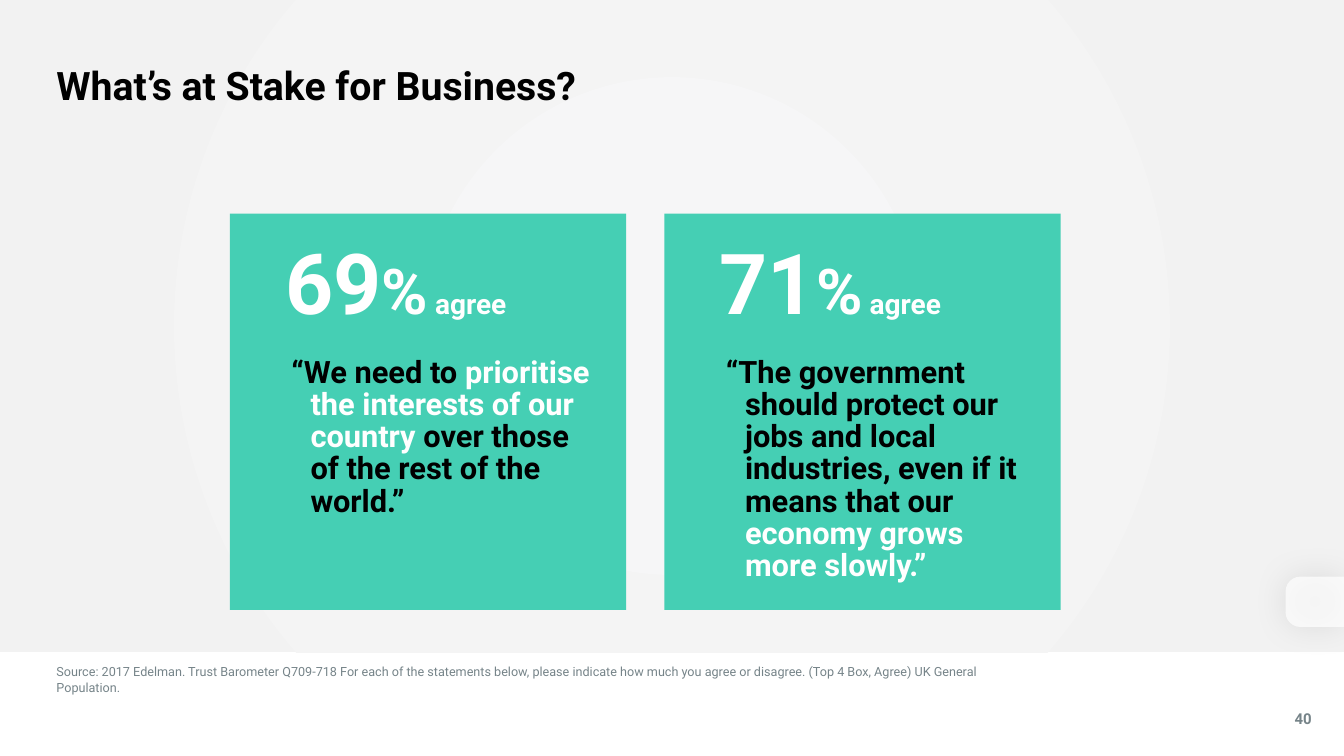
from lxml import etree
from pptx import Presentation
from pptx.dml.color import RGBColor
from pptx.enum.shapes import MSO_SHAPE as Shape
from pptx.enum.text import MSO_ANCHOR as Anchor, PP_ALIGN as Align
from pptx.oxml import parse_xml
from pptx.oxml.ns import nsdecls, qn
from pptx.util import Inches, Pt

COLORS = {
    "black": "000000",
    "white": "FFFFFF",
    "teal": "45CFB4",
    "grey": "768489",
    "glow": "F6F6F7",
    "backdrop": "F2F2F2",
}
FONT = "Roboto"


def set_font(font, size, color, bold=True):
    font.name = FONT
    font.size = Pt(size)
    font.bold = bold
    font.color.rgb = RGBColor.from_string(COLORS[color])


def add_text(left, top, width, height, text=""):
    """Add a wrapping text box without insets; return its frame."""
    frame = slide.shapes.add_textbox(
        Inches(left), Inches(top), Inches(width), Inches(height)).text_frame
    frame.word_wrap = True
    frame.margin_left = frame.margin_right = 0
    frame.margin_top = frame.margin_bottom = 0
    frame.vertical_anchor = Anchor.TOP
    frame.text = text
    return frame


prs = Presentation()
prs.slide_width, prs.slide_height = Inches(13.33), Inches(7.5)
slide = prs.slides.add_slide(prs.slide_layouts[6])

# Backdrop with a radial gradient
backdrop = slide.shapes.add_shape(
    Shape.RECTANGLE, 0, 0, prs.slide_width, Inches(6.47))
backdrop.shadow.inherit = False
backdrop.line.fill.background()
backdrop.fill.gradient()
for stop, color in zip(backdrop.fill.gradient_stops, ("glow", "backdrop")):
    stop.color.rgb = RGBColor.from_string(COLORS[color])
gradient = backdrop.fill._xPr.find(qn("a:gradFill"))
gradient.replace(gradient.find(qn("a:lin")), parse_xml(
    f'<a:path {nsdecls("a")} path="circle">'
    '<a:fillToRect l="50000" t="50000" r="50000" b="50000"/></a:path>'))

# Title, source and page number
title = add_text(0.56, 0.57, 9.21, 0.51, "What’s at Stake for Business?")
title.vertical_anchor = Anchor.BOTTOM
set_font(title.paragraphs[0].font, 28, "black")

source = add_text(
    0.56, 6.59, 9.21, 0.52,
    "Source: 2017 Edelman. Trust Barometer Q709-718 For each of the "
    "statements below, please indicate how much you agree or disagree. "
    "(Top 4 Box, Agree) UK General Population.")
set_font(source.paragraphs[0].font, 9, "grey", bold=False)

page_number = add_text(12.75, 7.04, 0.35, 0.52, "40").paragraphs[0]
page_number.alignment = Align.CENTER
set_font(page_number.font, 10.7, "grey")

# Statement cards: share that agrees, then the quote in coloured parts
statements = [
    ("69", [("“We need to ", "black"),
            ("prioritise the interests of our country ", "white"),
            ("over those of the rest of the world.”", "black")]),
    ("71", [("“The government should protect our jobs and local industries, "
             "even if it means that our ", "black"),
            ("economy grows more slowly.”", "white")]),
]
CARD_SIZE, CARD_TOP, CARD_STEP = 3.93, 2.12, 4.31
LINE_SPACING = 0.87

for index, (share, quote_parts) in enumerate(statements):
    card_left = 2.28 + index * CARD_STEP
    card = slide.shapes.add_shape(
        Shape.RECTANGLE, Inches(card_left), Inches(CARD_TOP),
        Inches(CARD_SIZE), Inches(CARD_SIZE))
    card.shadow.inherit = False
    card.fill.solid()
    card.fill.fore_color.rgb = RGBColor.from_string(COLORS["teal"])
    card.line.fill.background()

    card_text = card.text_frame
    card_text.vertical_anchor = Anchor.TOP
    card_text.margin_top = Inches(0.3)
    card_text.margin_left = card_text.margin_right = Inches(0.1)
    card_text.margin_bottom = Inches(0.1)
    agreement = card_text.paragraphs[0]
    agreement.alignment = Align.LEFT
    agreement.line_spacing = LINE_SPACING
    agreement._p.get_or_add_pPr().set("marL", str(Inches(0.45)))
    for text, size in ((share, 60), ("%", 45), (" agree", 20)):
        run = agreement.add_run()
        run.text = text
        set_font(run.font, size, "white")

    quote = add_text(card_left + 0.61, 3.55, 3, 0.67).paragraphs[0]
    quote.line_spacing = LINE_SPACING
    quote_format = quote._p.get_or_add_pPr()
    quote_format.set("marL", str(Inches(0.19)))
    quote_format.set("indent", str(-Inches(0.19)))
    for text, color in quote_parts:
        run = quote.add_run()
        run.text = text
        set_font(run.font, 22, color)

# Translucent tab at the right edge, rounded on its left side
tab = slide.shapes.add_shape(
    Shape.ROUND_2_SAME_RECTANGLE,
    Inches(12.79), Inches(5.68), Inches(0.5), Inches(0.58))
tab.rotation = 270
tab.adjustments[0] = 0.296
tab.line.fill.background()
tab.fill.solid()
tab.fill.fore_color.rgb = RGBColor.from_string(COLORS["white"])
tab_color = tab.fill._xPr.find(qn("a:solidFill")).find(qn("a:srgbClr"))
etree.SubElement(tab_color, qn("a:alpha"), val="72000")
tab.shadow.inherit = False
tab_effects = tab._element.spPr.find(qn("a:effectLst"))
tab_effects.append(parse_xml(
    f'<a:outerShdw {nsdecls("a")} blurRad="{Pt(25)}" dist="0" '
    f'algn="ctr" rotWithShape="0"><a:srgbClr val="{COLORS["black"]}">'
    '<a:alpha val="12000"/></a:srgbClr></a:outerShdw>'))

prs.save("out.pptx")
